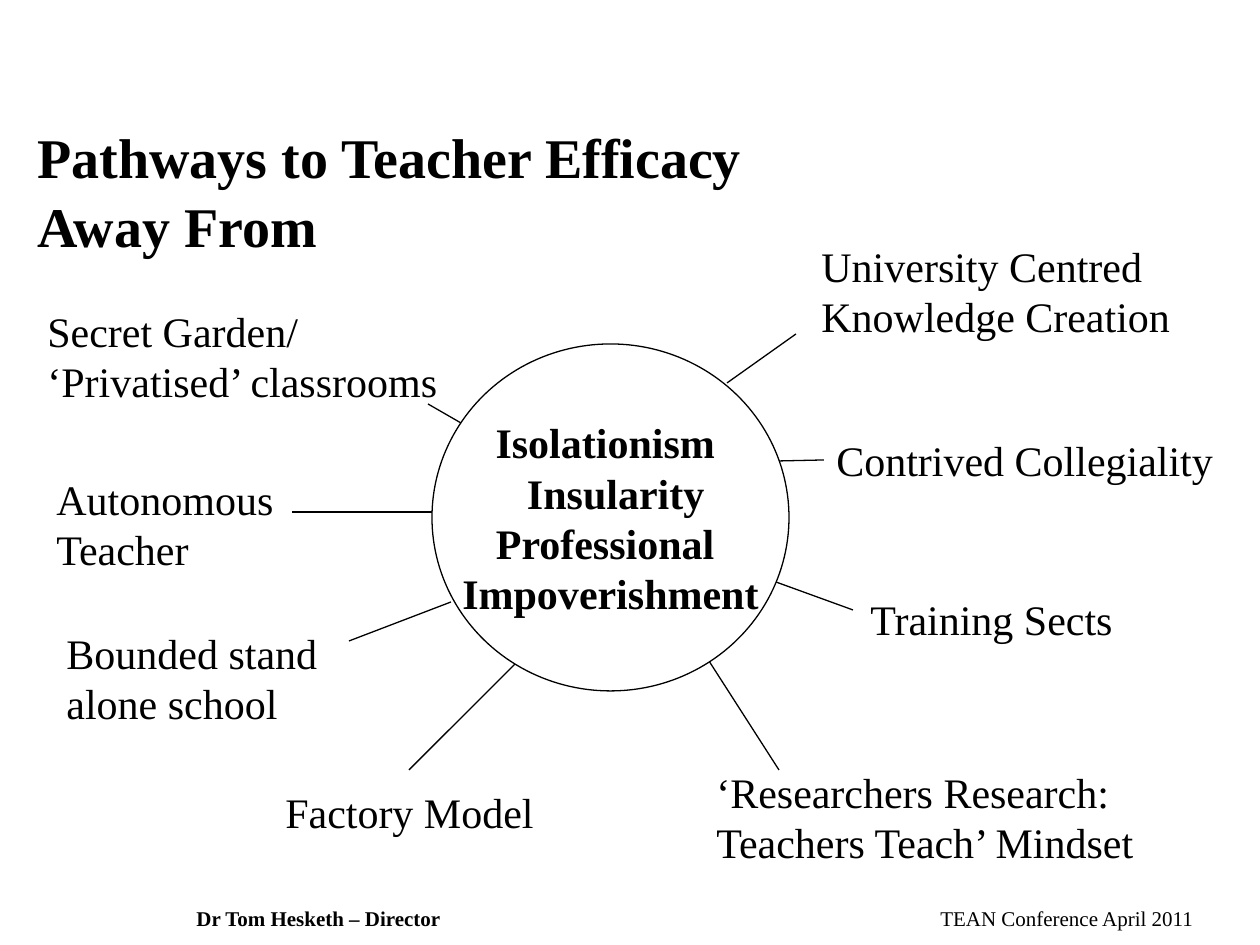
"""Build the slide on pathways to teacher efficacy."""
from pptx import Presentation
from pptx.dml.color import RGBColor
from pptx.enum.shapes import MSO_CONNECTOR, MSO_SHAPE
from pptx.enum.text import MSO_ANCHOR, PP_ALIGN
from pptx.oxml.ns import qn
from pptx.util import Pt
from lxml.etree import SubElement

SCALE = 914400 // 126
FONT = "Times New Roman"
COLOURS = {"ink": "000000", "paper": "FFFFFF"}

HEADINGS = [
    ("Pathways to Teacher Efficacy", 25, 116, 754, 81),
    ("Away From", 25, 185, 427, 81),
]
LABELS = [
    ("Secret Garden/ ‘Privatised’ classrooms", 35, 299, 436, 115),
    ("Autonomous\vTeacher", 44, 467, 253, 115),
    ("Bounded stand\nalone school", 54, 621, 297, 115),
    ("Factory Model", 273, 780, 277, 63),
    ("University Centred Knowledge Creation", 809, 234, 436, 115),
    ("Contrived Collegiality", 824, 428, 408, 63),
    ("Training Sects", 858, 587, 312, 63),
    ("‘Researchers Research:\nTeachers Teach’ Mindset", 704, 760, 451, 115),
]
SPOKES = [
    (461, 423, 428, 404),
    (432, 512, 292, 512),
    (515, 664, 409, 770),
    (779, 461, 824, 460),
    (776, 582, 853, 610),
    (451, 602, 349, 641),
    (727, 383, 796, 334),
    (709, 661, 779, 770),
]
CORE = "Isolationism \n Insularity\nProfessional \nImpoverishment"


def px(*lengths):
    """Turn lengths in px into EMU."""
    return [length * SCALE for length in lengths]


def colour(name):
    """Look up a named colour."""
    return RGBColor.from_string(COLOURS[name])


def write(frame, text, size=24, bold=False, align=PP_ALIGN.LEFT):
    """Fill a text frame, one paragraph for each line of text."""
    frame.text = text.replace("\v", "\n") if "\v" not in text else ""
    if "\v" in text:
        frame.paragraphs[0].text = text
    for paragraph in frame.paragraphs:
        paragraph.alignment = align
        for span in paragraph.runs:
            span.font.name = FONT
            span.font.size = Pt(size)
            span.font.bold = bold
            span.font.color.rgb = colour("ink")


def add_text(page, text, left, top, width, height, **style):
    """Add a wrapping text box."""
    box = page.shapes.add_textbox(*px(left, top, width, height))
    box.text_frame.word_wrap = True
    write(box.text_frame, text, **style)


def add_spoke(page, *ends):
    """Add a thin straight line between two points."""
    spoke = page.shapes.add_connector(MSO_CONNECTOR.STRAIGHT, *px(*ends))
    spoke.line.color.rgb = colour("ink")
    spoke.line.width = Pt(0.75)
    SubElement(spoke.element.spPr, qn("a:effectLst"))


def add_hub(page, text, left, top, width, height):
    """Add the outlined ellipse with its bold centred text."""
    hub = page.shapes.add_shape(MSO_SHAPE.OVAL, *px(left, top, width, height))
    hub.shadow.inherit = False
    hub.fill.solid()
    hub.fill.fore_color.rgb = colour("paper")
    hub.line.color.rgb = colour("ink")
    hub.line.width = Pt(0.75)
    hub.text_frame.word_wrap = False
    hub.text_frame.vertical_anchor = MSO_ANCHOR.MIDDLE
    write(hub.text_frame, text, bold=True, align=PP_ALIGN.CENTER)


def main():
    """Build and save the deck."""
    deck = Presentation()
    deck.slide_width, deck.slide_height = px(1260, 945)
    page = deck.slides.add_slide(deck.slide_layouts[6])
    add_text(page, "Dr Tom Hesketh – Director", 184, 899, 348, 38, size=12, bold=True)
    add_text(page, "TEAN Conference April 2011", 928, 899, 332, 38, size=12)
    for heading in HEADINGS:
        add_text(page, *heading, size=32, bold=True)
    for label in LABELS:
        add_text(page, *label)
    for spoke in SPOKES:
        add_spoke(page, *spoke)
    add_hub(page, CORE, 432, 344, 357, 347)
    deck.save("out.pptx")


if __name__ == "__main__":
    main()
